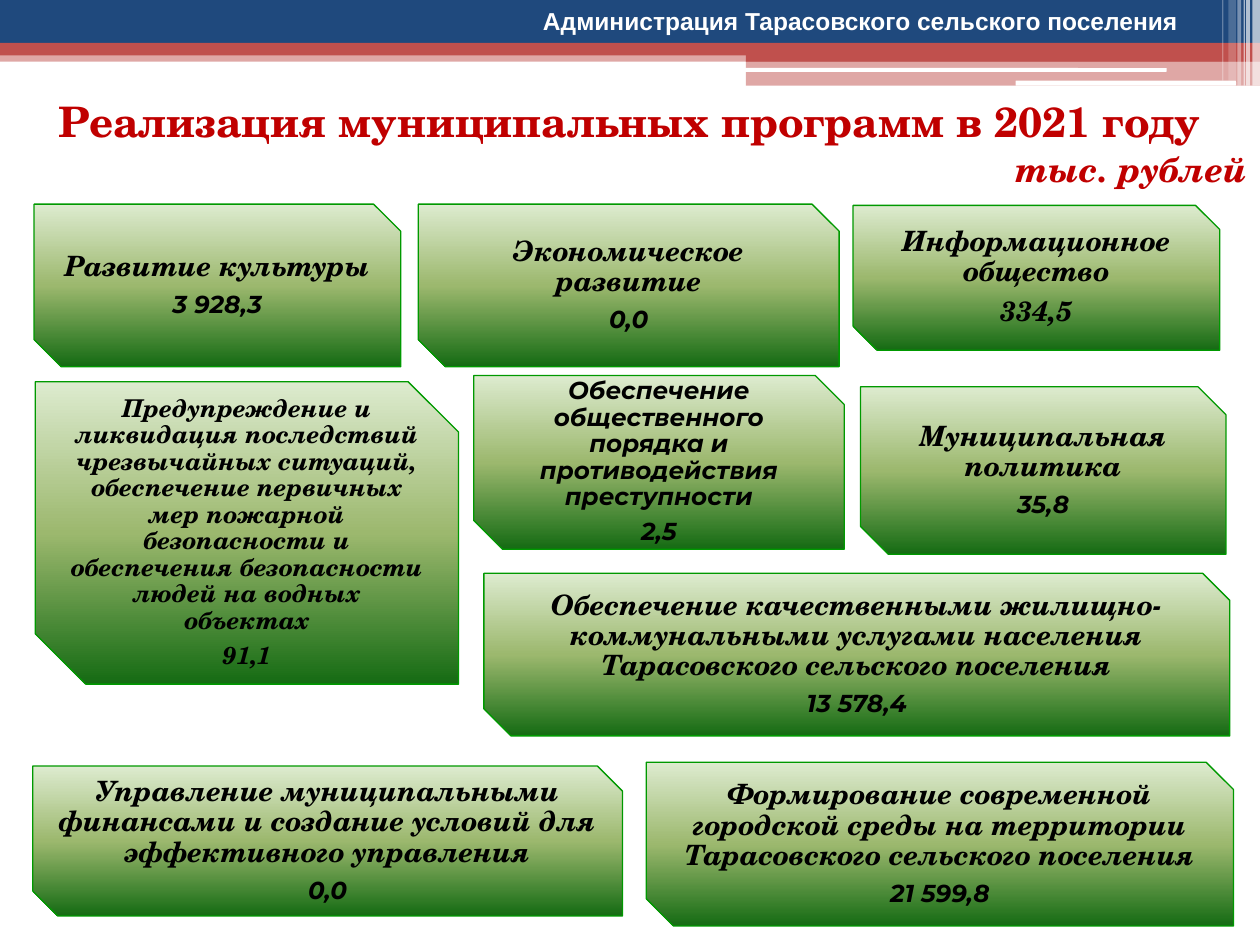
from copy import deepcopy
from pptx import Presentation
from pptx.dml.color import RGBColor
from pptx.enum.shapes import MSO_SHAPE as Shape
from pptx.enum.text import MSO_ANCHOR as Anchor, MSO_AUTO_SIZE as AutoSize, PP_ALIGN as Align
from pptx.oxml.ns import qn
from pptx.oxml.xmlchemy import OxmlElement
from pptx.util import Inches, Pt

COLUMNS, ROWS = 100, 75
CELL = Inches(0.1)

COLORS = {
    "navy": "1F497D", "red": "C0504D", "white": "FFFFFF", "title": "C00000",
    "text": "000000", "border": "009900",
    "light": "DDEBCF", "middle": "9CB86E", "dark": "156B13",
}
GRADIENT = [(0, "light"), (0.5, "middle"), (1, "dark")]
SERIF, SANS = "TeX Gyre Schola", "Montserrat"

STRIPES = [
    (0, 4, 100, 0.9, "red", 50),
    (0, 0, 100, 3.4, "navy", 100),
    (0, 3.4, 100, 1, "red", 100),
    (59.2, 3.9, 40.8, 1, "red", 100),
    (59.2, 4.8, 40.8, 2, "red", 50),
]
SLOTS = [(59.1, 5.4, 33.5, 0.3), (80.6, 6.4, 17.5, 0.4)]
GLINTS = [
    (99.4, 0.6, 6.8, 65), (98.9, 0.3, 6.8, 65), (98.7, 0.1, 6.8, 60),
    (98.2, 0.3, 6.8, 40), (97.5, 0.6, 6.4, 20), (97, 0.1, 6.4, 30),
]

MAIN, SMALL = (SERIF, 16), (SANS, 14)
SMALL_SERIF = (SERIF, 14)
PROGRAMS = [
    ((2.7, 16.2, 29.1, 12.9), "Развитие культуры", MAIN, "3 928,3", SMALL),
    ((33.2, 16.2, 33.4, 12.9), "Экономическое развитие", MAIN, "0,0", SMALL),
    ((67.7, 16.3, 29.1, 11.5), "Информационное общество", MAIN, "334,5", MAIN),
    ((37.6, 29.8, 29.4, 13.8),
     "Обеспечение общественного порядка и противодействия преступности",
     SMALL, "2,5", SMALL),
    ((2.8, 30.3, 33.6, 24),
     "Предупреждение и ликвидация последствий чрезвычайных ситуаций, "
     "обеспечение первичных мер пожарной безопасности и обеспечения "
     "безопасности людей на водных объектах", SMALL_SERIF, "91,1", SMALL_SERIF),
    ((68.3, 30.7, 29, 13.3), "Муниципальная политика", MAIN, "35,8", SMALL),
    ((2.6, 60.8, 46.8, 11.9),
     "Управление муниципальными финансами и создание условий для "
     "эффективного управления", MAIN, "0,0", SMALL),
    ((51.3, 60.5, 46.6, 13),
     "Формирование современной городской среды на территории "
     "Тарасовского сельского поселения", MAIN, "21 599,8", SMALL),
    ((38.4, 45.5, 59.2, 12.9),
     "Обеспечение качественными жилищно-коммунальными услугами населения "
     "Тарасовского сельского поселения", MAIN, "13 578,4", SMALL),
]


def color(name):
    return RGBColor.from_string(COLORS[name])


def place(area):
    return [round(length * CELL) for length in area]


def set_attributes(target, values):
    for name, value in values.items():
        setattr(target, name, value)


def write(paragraph, text, font_name, size, ink, italic=False, **layout):
    run = paragraph.add_run()
    run.text = text
    set_attributes(run.font, {"name": font_name, "size": Pt(size), "bold": True, "italic": italic})
    run.font.color.rgb = color(ink)
    set_attributes(paragraph, layout)


def add_band(slide, area, fill_name, opacity=100, kind=Shape.RECTANGLE):
    band = slide.shapes.add_shape(kind, *place(area))
    band.shadow.inherit = False
    band.line.fill.background()
    band.fill.solid()
    band.fill.fore_color.rgb = color(fill_name)
    if opacity < 100:
        alpha = OxmlElement("a:alpha")
        alpha.set("val", str(opacity * 1000))
        band.fill._xPr.find(".//" + qn("a:srgbClr")).append(alpha)


def add_header(slide):
    for *area, fill_name, opacity in STRIPES:
        add_band(slide, area, fill_name, opacity)
    for area in SLOTS:
        add_band(slide, area, "white", kind=Shape.ROUNDED_RECTANGLE)
    for left, width, height, opacity in GLINTS:
        add_band(slide, (left, 0, width, height), "white", opacity)


def add_text_frame(slide, area):
    frame = slide.shapes.add_textbox(*place(area)).text_frame
    set_attributes(frame, {"word_wrap": True, "auto_size": AutoSize.SHAPE_TO_FIT_TEXT})
    return frame


def fill_with_gradient(card):
    card.fill.gradient()
    card.fill.gradient_angle = 270
    stop_list = card._element.spPr.find(".//" + qn("a:gsLst"))
    stop_list.append(deepcopy(stop_list[0]))
    for stop, (position, name) in zip(card.fill.gradient_stops, GRADIENT):
        stop.position = position
        stop.color.rgb = color(name)


def add_program(slide, area, title, title_style, amount, amount_style):
    card = slide.shapes.add_shape(Shape.SNIP_2_DIAG_RECTANGLE, *place(area))
    card.shadow.inherit = False
    fill_with_gradient(card)
    card.line.color.rgb = color("border")
    card.line.width = Pt(0.75)
    frame = card.text_frame
    set_attributes(frame, {"word_wrap": True, "vertical_anchor": Anchor.MIDDLE})
    set_attributes(frame, {f"margin_{side}": Inches(0.07) for side in ("left", "top", "right", "bottom")})
    lines = [(frame.paragraphs[0], title, title_style),
             (frame.add_paragraph(), amount, amount_style)]
    for paragraph, text, (font_name, size) in lines:
        write(paragraph, text, font_name, size, "text", italic=True, alignment=Align.CENTER,
              line_spacing=0.9, space_after=Pt(0.35 * size))


def main():
    deck = Presentation()
    set_attributes(deck, {"slide_width": COLUMNS * CELL, "slide_height": ROWS * CELL})
    slide = deck.slides.add_slide(deck.slide_layouts[6])
    add_header(slide)
    organization = add_text_frame(slide, (36.6, 0, 63.4, 3.4))
    write(organization.paragraphs[0], "Администрация Тарасовского сельского поселения",
          "Arial", 14, "white", alignment=Align.CENTER)
    for program in PROGRAMS:
        add_program(slide, *program)
    heading = add_text_frame(slide, (0, 7.1, 100, 8.6))
    write(heading.paragraphs[0], "Реализация муниципальных программ в 2021 году",
          SERIF, 24, "title", alignment=Align.CENTER)
    write(heading.add_paragraph(), "тыс. рублей", SERIF, 20, "title", italic=True,
          alignment=Align.RIGHT, space_before=Pt(1))
    deck.save("out.pptx")


if __name__ == "__main__":
    main()
